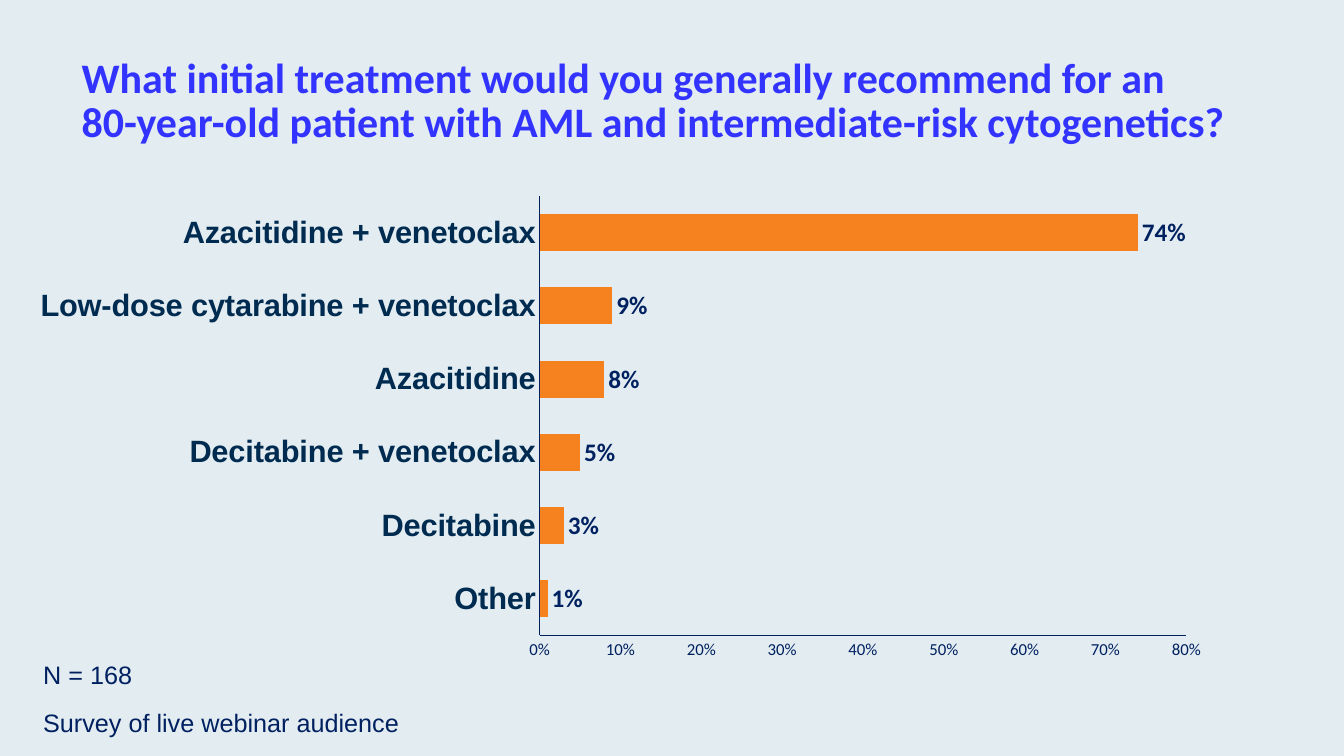
from lxml import etree
from pptx import Presentation
from pptx.chart.data import CategoryChartData
from pptx.dml.color import RGBColor
from pptx.enum import chart as ch, text as t
from pptx.oxml import ns
from pptx.util import Inches, Pt

COLORS = {
    "background": "E2ECF1",
    "title": "3333FF",
    "navy": "002060",
    "category": "002B50",
    "bar": "F6821F",
}

prs = Presentation()
prs.slide_width, prs.slide_height = Inches(13.33), Inches(7.5)
slide = prs.slides.add_slide(prs.slide_layouts[6])
slide.background.fill.solid()
slide.background.fill.fore_color.rgb = RGBColor.from_string(COLORS["background"])


def style(font, size, color="navy", name="Calibri", bold=False):
    font.size, font.name, font.bold = Pt(size), name, bold
    font.color.rgb = RGBColor.from_string(COLORS[color])


def add_text(words, left, top, width, height, wrap=False, margin=None,
             anchor=t.MSO_ANCHOR.TOP, spacing=None, **font_format):
    box = slide.shapes.add_textbox(*map(Inches, (left, top, width, height)))
    frame = box.text_frame
    frame.word_wrap, frame.vertical_anchor = wrap, anchor
    if margin is not None:
        frame.margin_left = frame.margin_right = Inches(margin)
        frame.margin_top = frame.margin_bottom = Inches(margin)
    paragraph = frame.paragraphs[0]
    paragraph.text = words
    paragraph.line_spacing = spacing
    for run in paragraph.runs:
        style(run.font, **font_format)


# Question
add_text("What initial treatment would you generally recommend for an \v"
         "80-year-old patient with AML and intermediate-risk cytogenetics?",
         0.81, 0.39, 12, 1.25, wrap=True, margin=0, anchor=t.MSO_ANCHOR.MIDDLE,
         spacing=0.88, size=30, color="title", bold=True)

# Answers, from the bottom bar to the top one
answers = {
    "Other": 0.01,
    "Decitabine": 0.03,
    "Decitabine + venetoclax": 0.05,
    "Azacitidine": 0.08,
    "Low-dose cytarabine + venetoclax": 0.09,
    "Azacitidine + venetoclax": 0.74,
}
data = CategoryChartData(number_format="0%")
data.categories = answers.keys()
data.add_series("Series 1", answers.values())
survey = slide.shapes.add_chart(
    ch.XL_CHART_TYPE.BAR_CLUSTERED, Inches(0.17), Inches(1.79),
    Inches(12.08), Inches(4.89), data).chart
survey.has_legend = survey.has_title = False
style(survey.font, 10)

# Bars and their values
bars = survey.plots[0]
bars.gap_width, bars.overlap, bars.vary_by_categories = 98, -19, False
bar_fill = bars.series[0].format.fill
bar_fill.solid()
bar_fill.fore_color.rgb = RGBColor.from_string(COLORS["bar"])
values = bars.series[0].data_labels
values.show_value = True
values.position = ch.XL_LABEL_POSITION.OUTSIDE_END
values.number_format, values.number_format_is_linked = "0%", False
style(values.font, 18, bold=True)

# Axes
treatments, shares = survey.category_axis, survey.value_axis
for axis in (treatments, shares):
    axis.has_major_gridlines = False
    axis.major_tick_mark = axis.minor_tick_mark = ch.XL_TICK_MARK.NONE
    axis.format.line.width = Pt(0.75)
    axis.format.line.color.rgb = RGBColor.from_string(COLORS["navy"])
style(treatments.tick_labels.font, 22, "category", "Arial", bold=True)
style(shares.tick_labels.font, 12)
shares.minimum_scale, shares.maximum_scale, shares.major_unit = 0, 0.8, 0.1
shares.tick_labels.number_format = "0%"
shares.tick_labels.number_format_is_linked = False

# Inner plot area, as fractions of the chart
plot_area = survey.plots[0]._element.getparent()
for old in plot_area.findall(ns.qn("c:layout")):
    plot_area.remove(old)
layout = etree.Element(ns.qn("c:layout"))
plot_area.insert(0, layout)
manual = etree.SubElement(layout, ns.qn("c:manualLayout"))
for tag, value in (("layoutTarget", "inner"), ("xMode", "edge"), ("yMode", "edge"),
                   ("x", 0.429), ("y", 0.032), ("w", 0.531), ("h", 0.891)):
    etree.SubElement(manual, ns.qn(f"c:{tag}"), val=str(value))

# Notes on the survey
for note, top, width in (("Survey of live webinar audience", 6.97, 3.76),
                         ("N = 168", 6.49, 1.09)):
    add_text(note, 0.33, top, width, 0.4, size=18, name="Arial")

prs.save("out.pptx")
